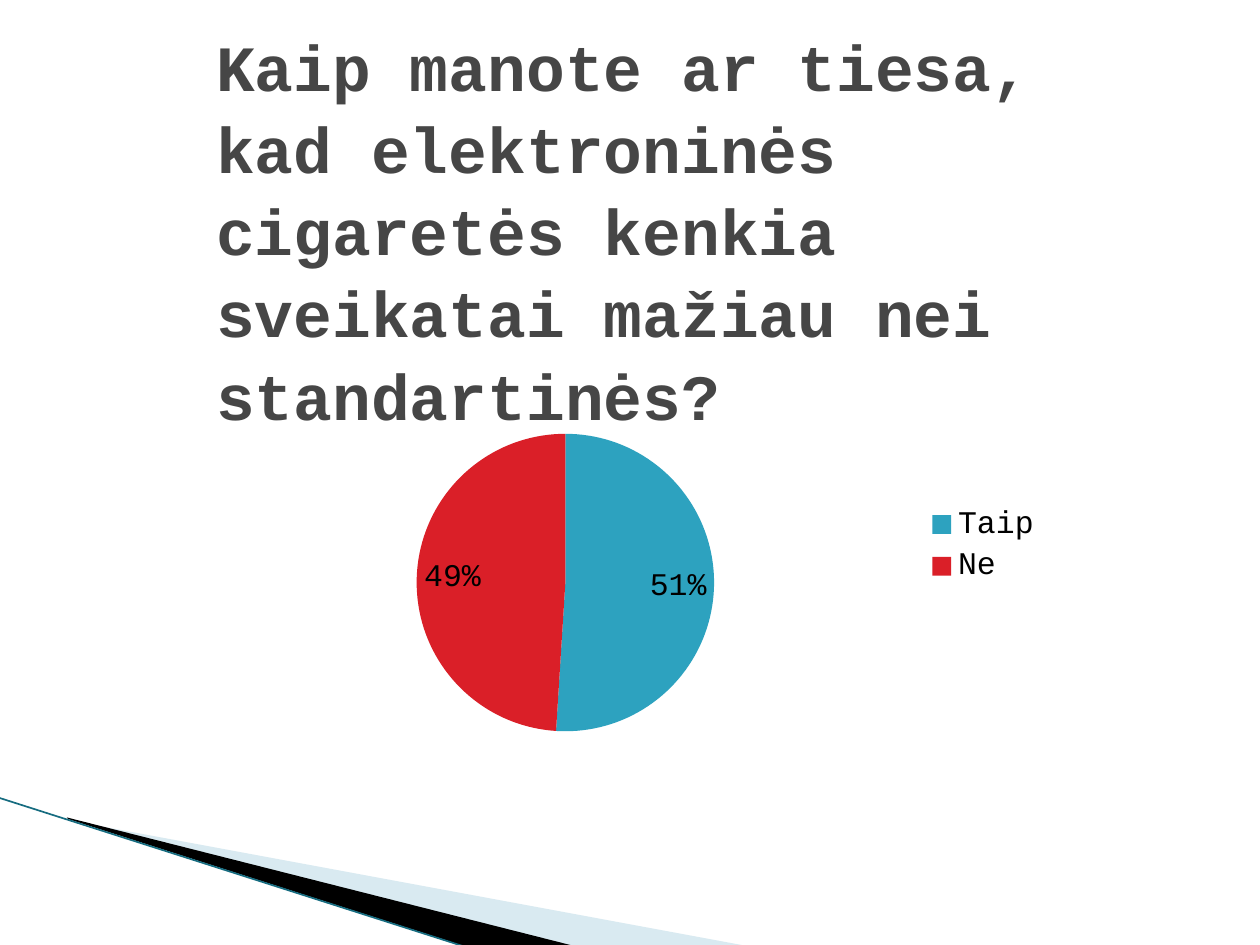
from lxml import etree
from pptx import Presentation
from pptx.chart.data import CategoryChartData
from pptx.dml.color import RGBColor
from pptx.enum.chart import XL_CHART_TYPE, XL_LABEL_POSITION, XL_LEGEND_POSITION
from pptx.enum.shapes import MSO_CONNECTOR
from pptx.enum.text import MSO_ANCHOR
from pptx.oxml import parse_xml
from pptx.oxml.ns import nsdecls, qn
from pptx.util import Cm, Pt

PIE = XL_CHART_TYPE.PIE
INSIDE_END = XL_LABEL_POSITION.INSIDE_END
LEGEND_RIGHT = XL_LEGEND_POSITION.RIGHT
STRAIGHT = MSO_CONNECTOR.STRAIGHT
MIDDLE = MSO_ANCHOR.MIDDLE

# Content
FONT = "Courier New"
QUESTION = ("Kaip manote ar tiesa, kad elektroninės cigaretės "
            "kenkia sveikatai mažiau nei standartinės?")
ANSWERS = [("Taip", 51, "2DA2BF"), ("Ne", 49, "DA1F28")]

# Positions in centimetres
TITLE_BOX = (4.11, 2.95, 17.15, 3.28)
CHART_BOX = (4.11, 6.83, 17.15, 8.33)
PIE_AREA = {"x": 0.25, "y": 0.23, "w": 0.35, "h": 0.72}  # shares of the chart
WEDGES = [  # points, colour, opacity in percent
    ([(1.4, 16.54), (15.11, 19.08), (11.58, 19.08), (1.4, 16.51)], "A0CBDC", 40),
    ([(1.35, 16.48), (11.61, 19.08), (9.45, 19.1), (1.37, 16.51)], "000000", 100),
]
EDGE_LINE = (-0.03, 16.08, 9.42, 19.1)
EDGE_COLOR = "166C80"


def rgb(color):
    return RGBColor.from_string(color)


def lengths(values):
    return [Cm(value) for value in values]


def set_font(font, size, color, bold=False):
    font.name = FONT
    font.size = Pt(size)
    font.bold = bold
    font.color.rgb = rgb(color)


def add_wedge(slide, points, color, opacity):
    corners = [lengths(point) for point in points]
    builder = slide.shapes.build_freeform(*corners[0], scale=1.0)
    builder.add_line_segments(corners[1:], close=True)
    shape = builder.convert_to_shape()
    shape.shadow.inherit = False
    shape.line.fill.background()
    shape.fill.solid()
    shape.fill.fore_color.rgb = rgb(color)
    if opacity < 100:
        color_element = shape.fill._xPr.find(".//" + qn("a:srgbClr"))
        alpha = etree.SubElement(color_element, qn("a:alpha"))
        alpha.set("val", str(opacity * 1000))


def add_edge(slide):
    connector = slide.shapes.add_connector(STRAIGHT, *lengths(EDGE_LINE))
    connector.line.color.rgb = rgb(EDGE_COLOR)
    connector.line.width = Pt(0.95)
    etree.SubElement(connector._element.spPr, qn("a:effectLst"))


def add_pie(slide):
    data = CategoryChartData()
    data.categories = [name for name, _, _ in ANSWERS]
    data.add_series("Series 1", [value for _, value, _ in ANSWERS])
    chart = slide.shapes.add_chart(PIE, *lengths(CHART_BOX), data).chart
    set_font(chart.font, 18, "000000")
    chart.has_title = False
    chart.has_legend = True
    chart.legend.position = LEGEND_RIGHT
    chart.legend.include_in_layout = False

    plot = chart.plots[0]
    plot.vary_by_categories = True
    for index, (_, _, color) in enumerate(ANSWERS):
        fill = plot.series[0].points[index].format.fill
        fill.solid()
        fill.fore_color.rgb = rgb(color)

    plot.has_data_labels = True
    labels = plot.data_labels
    labels.show_percentage = True
    labels.show_value = False
    labels.number_format = "0%"
    labels.number_format_is_linked = False
    labels.position = INSIDE_END
    set_font(labels.font, 18, "000000")

    # Fixed place for the pie inside the chart
    plot_area = chart._chartSpace.chart.plotArea
    for old_layout in plot_area.findall(qn("c:layout")):
        plot_area.remove(old_layout)
    sizes = "".join(f'<c:{key} val="{share}"/>' for key, share in PIE_AREA.items())
    plot_area.insert(0, parse_xml(
        f'<c:layout {nsdecls("c")}><c:manualLayout><c:layoutTarget val="inner"/>'
        f'<c:xMode val="edge"/><c:yMode val="edge"/>{sizes}'
        '</c:manualLayout></c:layout>'))


def add_title(slide):
    frame = slide.shapes.add_textbox(*lengths(TITLE_BOX)).text_frame
    frame.word_wrap = True
    frame.vertical_anchor = MIDDLE
    paragraph = frame.paragraphs[0]
    paragraph.line_spacing = 1.06
    run = paragraph.add_run()
    run.text = QUESTION
    set_font(run.font, 36.9, "464646", bold=True)


def main():
    presentation = Presentation()
    presentation.slide_width = Cm(25.4)
    presentation.slide_height = Cm(19.05)
    slide = presentation.slides.add_slide(presentation.slide_layouts[6])

    # Corner decoration
    for wedge in WEDGES:
        add_wedge(slide, *wedge)
    add_edge(slide)

    # Question and answers
    add_pie(slide)
    add_title(slide)
    presentation.save("out.pptx")


if __name__ == "__main__":
    main()
